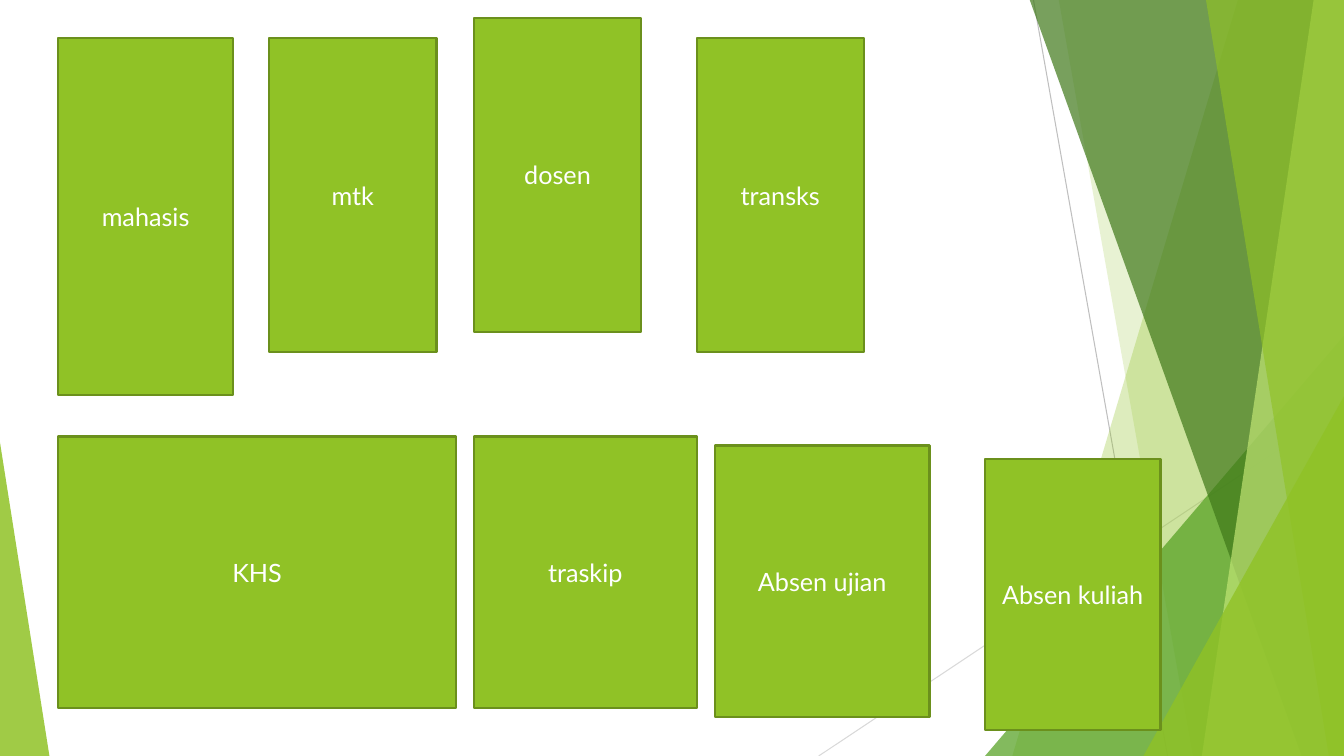
"""Build a slide of eight labelled green boxes over a faceted backdrop."""
from lxml import etree
from pptx import Presentation
from pptx import util as u
from pptx.dml.color import RGBColor
from pptx.enum import shapes, text
from pptx.oxml.ns import qn

COLOURS = {
    "lime": "90C226", "pale": "C0E474", "green": "54A021", "forest": "3F7819",
    "edge": "6B901C", "grey": "BFBFBF", "silver": "D9D9D9", "white": "FFFFFF",
}
WIDTH, HEIGHT, TOP = 13.33, 7.5, -0.01

RAYS = [
    ((10.25, 0), (11.58, HEIGHT), "grey"),
    ((WIDTH, 4.03), (8.12, HEIGHT), "silver"),
]
BACK_BANDS = [(12.28, 10.04, "lime", 30), (10.5, 11.83, "lime", 20)]
FRONT_BANDS = [
    (10.21, 12.91, "forest", 70),
    (13.03, 11.92, "pale", 70),
    (11.96, 13.18, "lime", 65),
]
BOXES = [
    ("mahasis", 0.58, 0.38, 1.73, 3.54),
    ("mtk", 2.67, 0.38, 1.66, 3.11),
    ("dosen", 4.7, 0.18, 1.66, 3.11),
    ("transks", 6.91, 0.38, 1.66, 3.11),
    ("KHS", 0.58, 4.33, 3.94, 2.69),
    ("traskip", 4.7, 4.33, 2.21, 2.69),
    ("Absen kuliah", 9.77, 4.55, 1.74, 2.69),
    ("Absen ujian", 7.09, 4.42, 2.13, 2.69),
]


def colour(name):
    """Return the named colour."""
    return RGBColor.from_string(COLOURS[name])


def paint(shape, fill, opacity=100):
    """Fill a shape at an opacity in percent, without line or shadow."""
    shape.shadow.inherit = False
    shape.line.fill.background()
    shape.fill.solid()
    shape.fill.fore_color.rgb = colour(fill)
    if opacity < 100:
        tint = shape.fill._xPr.find(".//" + qn("a:srgbClr"))
        etree.SubElement(tint, qn("a:alpha")).set("val", str(opacity * 1000))


def add_ray(page, start, end, name):
    """Draw a thin straight line."""
    points = [u.Inches(value) for value in (*start, *end)]
    ray = page.shapes.add_connector(shapes.MSO_CONNECTOR.STRAIGHT, *points)
    ray.line.color.rgb = colour(name)
    ray.line.width = u.Pt(0.75)
    etree.SubElement(ray._element.spPr, qn("a:effectLst"))


def add_band(page, top_x, bottom_x, fill, opacity):
    """Draw a full-height band from a slanted left edge to the right side."""
    corners = [(top_x, TOP), (WIDTH, TOP), (WIDTH, HEIGHT), (bottom_x, HEIGHT)]
    points = [(u.Inches(x), u.Inches(y)) for x, y in corners]
    builder = page.shapes.build_freeform(*points[0])
    builder.add_line_segments(points[1:], close=True)
    paint(builder.convert_to_shape(), fill, opacity)


def add_triangle(page, left, top, width, apex, fill, opacity):
    """Draw a right triangle standing on the bottom edge."""
    frame = [u.Inches(value) for value in (left, top, width, HEIGHT - top)]
    triangle = page.shapes.add_shape(
        shapes.MSO_SHAPE.ISOSCELES_TRIANGLE, *frame)
    triangle.adjustments[0] = apex
    paint(triangle, fill, opacity)


def add_box(page, label, *frame):
    """Draw a green box with a centred label."""
    box = page.shapes.add_shape(
        shapes.MSO_SHAPE.RECTANGLE, *[u.Inches(value) for value in frame])
    paint(box, "lime")
    box.line.color.rgb = colour("edge")
    box.line.width = u.Pt(1.5)
    box.text_frame.text = label
    box.text_frame.word_wrap = True
    box.text_frame.vertical_anchor = text.MSO_ANCHOR.MIDDLE
    para = box.text_frame.paragraphs[0]
    para.alignment = text.PP_ALIGN.CENTER
    font = para.runs[0].font
    font.name = "Lato"
    font.size = u.Pt(18)
    font.color.rgb = colour("white")


def main():
    """Build and save the deck."""
    deck = Presentation()
    deck.slide_width, deck.slide_height = u.Inches(WIDTH), u.Inches(HEIGHT)
    page = deck.slides.add_slide(deck.slide_layouts[6])
    for ray in RAYS:
        add_ray(page, *ray)
    for band in BACK_BANDS:
        add_band(page, *band)
    add_triangle(page, 9.77, 3.33, 3.56, 1, "green", 72)
    for band in FRONT_BANDS:
        add_band(page, *band)
    add_triangle(page, 11.34, 3.93, 1.99, 1, "lime", 80)
    add_triangle(page, 0, 4.39, 0.49, 0, "lime", 85)
    for box in BOXES:
        add_box(page, *box)
    deck.save("out.pptx")


if __name__ == "__main__":
    main()
